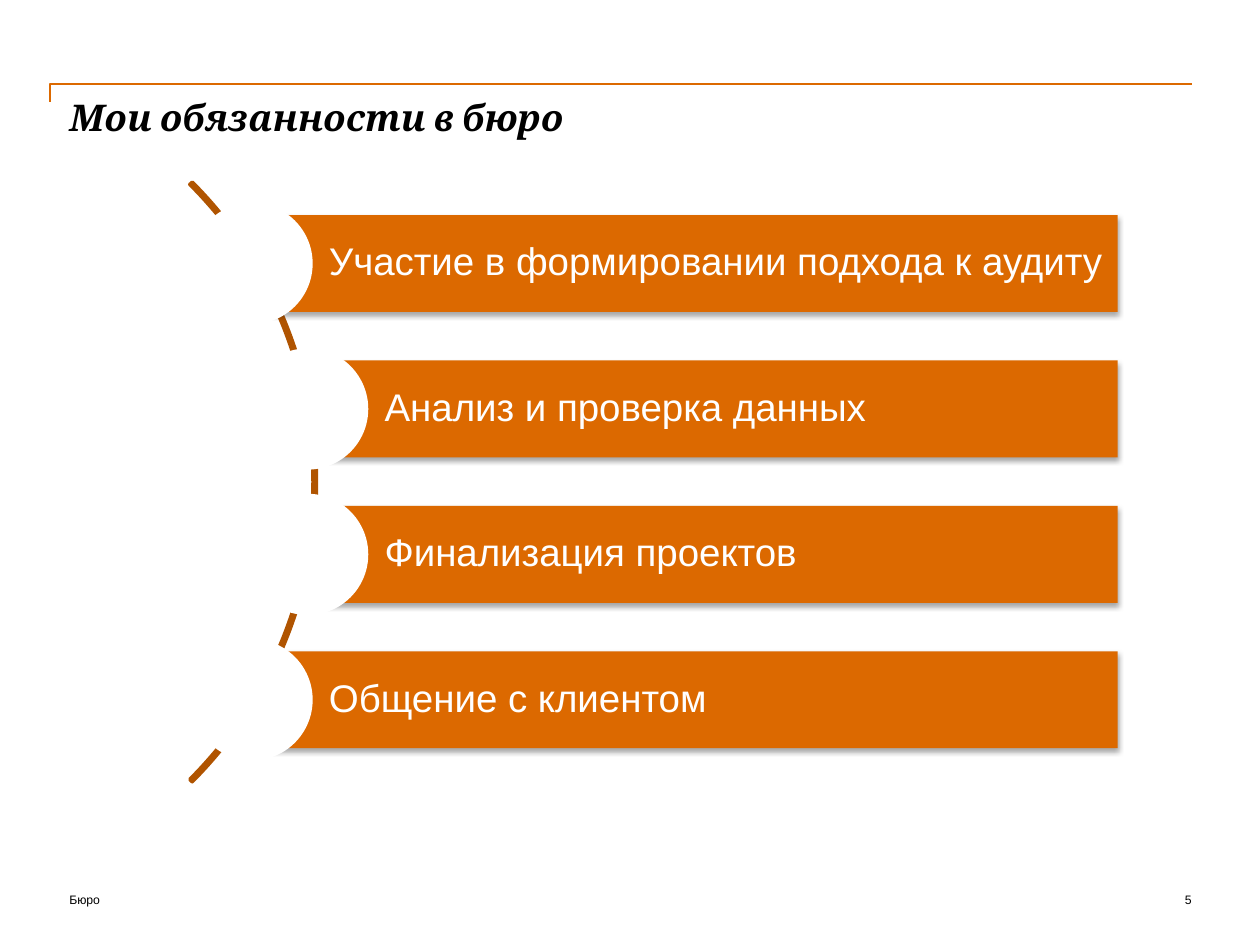
from lxml.etree import SubElement
from pptx import Presentation
from pptx.dml.color import RGBColor
from pptx.enum.shapes import MSO_SHAPE
from pptx.enum.text import MSO_ANCHOR, PP_ALIGN
from pptx.oxml.ns import qn
from pptx.util import Pt

BLACK = RGBColor(0, 0, 0)
WHITE = RGBColor(255, 255, 255)
ORANGE = RGBColor(0xDC, 0x69, 0x00)
RUST = RGBColor(0xB0, 0x54, 0x00)

TITLE = "Мои обязанности в бюро"
FOOTER = "Бюро"
NUMBER = "5"
DUTIES = [
    ("Участие в формировании подхода к аудиту", 144),
    ("Анализ и проверка данных", 175.8),
    ("Финализация проектов", 175.8),
    ("Общение с клиентом", 144),
]
TOP, PITCH, HEIGHT, RIGHT = 122.9, 83.1, 55.4, 638.7
DISC = 69.3
RULE = [(28.8, 58.3), (28.8, 48.2), (681.1, 48.2)]


def style(para, size, color, face="Arial"):
    for run in para.runs:
        run.font.size = Pt(size)
        run.font.name = face
        run.font.color.rgb = color


def margins(frame, left, rest):
    frame.margin_left = Pt(left)
    frame.margin_top = frame.margin_right = frame.margin_bottom = Pt(rest)


def label(text, box, size, face="Arial", align=PP_ALIGN.LEFT):
    frame = slide.shapes.add_textbox(*map(Pt, box)).text_frame
    frame.word_wrap = True
    margins(frame, 0, 0)
    frame.text = text
    para = frame.paragraphs[0]
    para.alignment = align
    style(para, size, BLACK, face)
    return para


def solid(kind, box, color):
    shape = slide.shapes.add_shape(kind, *map(Pt, box))
    shape.shadow.inherit = False
    shape.fill.solid()
    shape.fill.fore_color.rgb = color
    shape.line.fill.background()
    return shape


def outline(shape, color, width):
    shape.shadow.inherit = False
    shape.fill.background()
    shape.line.color.rgb = color
    shape.line.width = Pt(width)


def shade(shape):
    effects = shape.element.spPr.find(qn("a:effectLst"))
    outer = SubElement(effects, qn("a:outerShdw"), blurRad=str(Pt(3.1)),
                       dist=str(Pt(1.8)), dir="5400000", rotWithShape="0")
    color = SubElement(outer, qn("a:srgbClr"), val=str(BLACK))
    SubElement(color, qn("a:alpha"), val="35000")


def duty(text, left, top):
    bar = solid(MSO_SHAPE.RECTANGLE, (left, top, RIGHT - left, HEIGHT), ORANGE)
    shade(bar)
    frame = bar.text_frame
    frame.word_wrap = True
    frame.vertical_anchor = MSO_ANCHOR.MIDDLE
    margins(frame, 44, 4.4)
    frame.text = text
    para = frame.paragraphs[0]
    para.alignment = PP_ALIGN.LEFT
    para.line_spacing = 0.9
    style(para, 22, WHITE)
    disc = (left - DISC / 2, top + (HEIGHT - DISC) / 2, DISC, DISC)
    solid(MSO_SHAPE.OVAL, disc, WHITE)


deck = Presentation()
deck.slide_width, deck.slide_height = Pt(720), Pt(540)
slide = deck.slides.add_slide(deck.slide_layouts[6])

pen = slide.shapes.build_freeform(*map(Pt, RULE[0]))
pen.add_line_segments([(Pt(x), Pt(y)) for x, y in RULE[1:]], close=False)
outline(pen.convert_to_shape(), ORANGE, 1)

title = label(TITLE, (39.6, 54, 641, 72), 21, "Cambria")
for run in title.runs:
    run.font.bold = run.font.italic = True
label(FOOTER, (39.6, 509.8, 204, 12), 7)
label(NUMBER, (561, 509.8, 120, 12), 7, align=PP_ALIGN.RIGHT)

arc = slide.shapes.add_shape(MSO_SHAPE.BLOCK_ARC, Pt(-303.8), Pt(33.1), Pt(484.6), Pt(484.6))
for i, value in enumerate((189, 27, 0.004)):
    arc.adjustments[i] = value
outline(arc, RUST, 2)

for i, (text, left) in enumerate(DUTIES):
    duty(text, left, TOP + i * PITCH)

deck.save("out.pptx")
